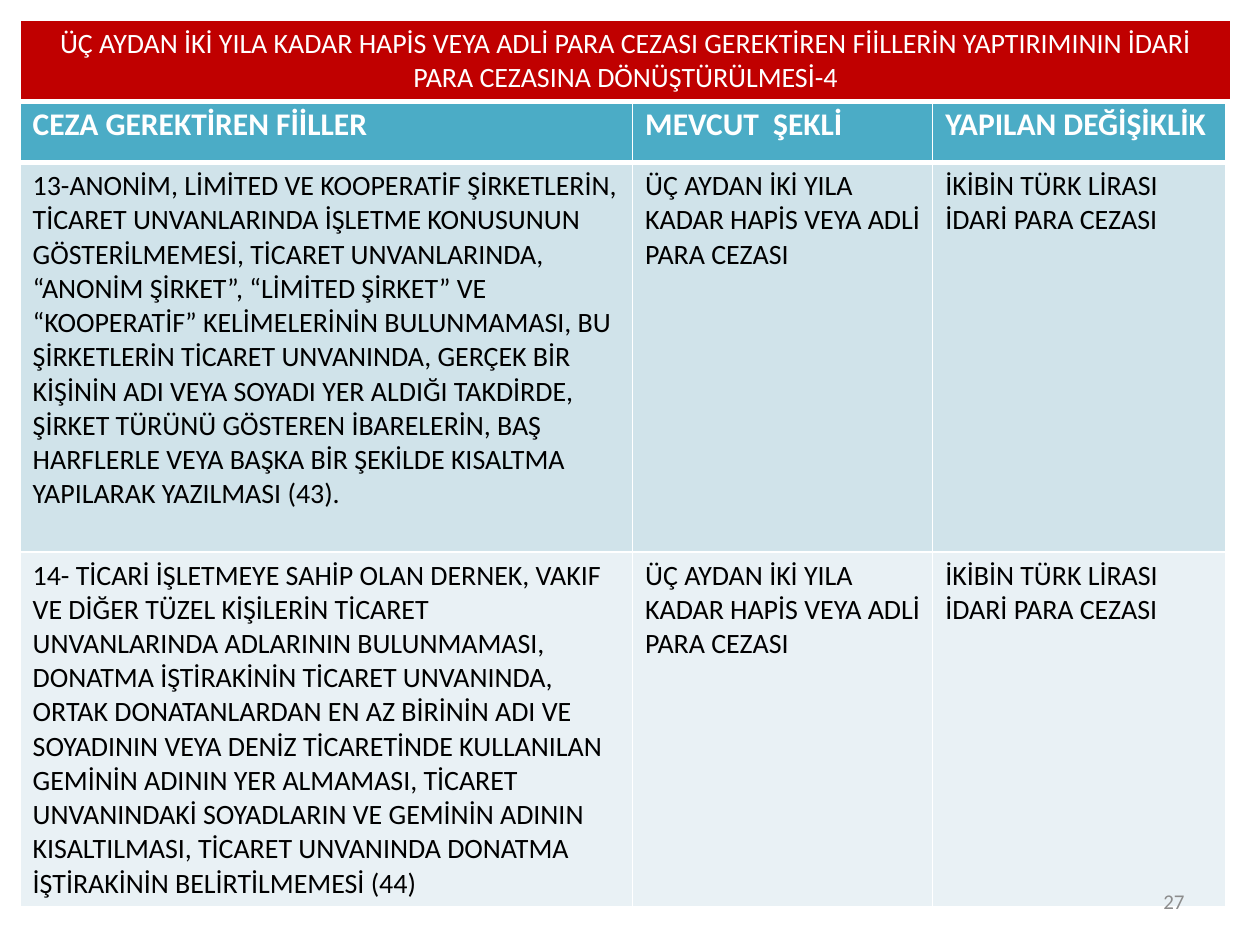
from lxml.etree import SubElement
from pptx import Presentation
from pptx.dml.color import RGBColor
from pptx.enum.text import MSO_ANCHOR, PP_ALIGN
from pptx.oxml.ns import qn
from pptx.util import Pt

FONT = "Calibri"
COLORS = {
    "white": "FFFFFF",
    "black": "000000",
    "title": "C00000",
    "header": "4BACC6",
    "band_dark": "D0E3EA",
    "band_light": "E9F1F5",
    "number": "8C8C8C",
}
TITLE = (
    "ÜÇ AYDAN İKİ YILA KADAR HAPİS VEYA ADLİ PARA CEZASI GEREKTİREN "
    "FİİLLERİN YAPTIRIMININ İDARİ PARA CEZASINA DÖNÜŞTÜRÜLMESİ-4"
)
HEADERS = ["CEZA GEREKTİREN FİİLLER", "MEVCUT  ŞEKLİ", "YAPILAN DEĞİŞİKLİK"]
OFFENCES = [
    "13-ANONİM, LİMİTED VE KOOPERATİF ŞİRKETLERİN, TİCARET UNVANLARINDA "
    "İŞLETME KONUSUNUN GÖSTERİLMEMESİ, TİCARET UNVANLARINDA, “ANONİM ŞİRKET”, "
    "“LİMİTED ŞİRKET” VE “KOOPERATİF” KELİMELERİNİN BULUNMAMASI, BU "
    "ŞİRKETLERİN TİCARET UNVANINDA, GERÇEK BİR KİŞİNİN ADI VEYA SOYADI YER "
    "ALDIĞI TAKDİRDE, ŞİRKET TÜRÜNÜ GÖSTEREN İBARELERİN, BAŞ HARFLERLE VEYA "
    "BAŞKA BİR ŞEKİLDE KISALTMA YAPILARAK YAZILMASI (43).",
    "14- TİCARİ İŞLETMEYE SAHİP OLAN DERNEK, VAKIF VE DİĞER TÜZEL KİŞİLERİN "
    "TİCARET UNVANLARINDA ADLARININ BULUNMAMASI, DONATMA İŞTİRAKİNİN TİCARET "
    "UNVANINDA, ORTAK DONATANLARDAN EN AZ BİRİNİN ADI VE SOYADININ VEYA DENİZ "
    "TİCARETİNDE KULLANILAN GEMİNİN ADININ YER ALMAMASI, TİCARET UNVANINDAKİ "
    "SOYADLARIN VE GEMİNİN ADININ KISALTILMASI, TİCARET UNVANINDA DONATMA "
    "İŞTİRAKİNİN BELİRTİLMEMESİ (44)",
]
CURRENT = "ÜÇ AYDAN İKİ YILA KADAR HAPİS VEYA ADLİ PARA CEZASI"
CHANGED = "İKİBİN TÜRK LİRASI İDARİ PARA CEZASI"


def write(frame, text, size, color, bold=False, align=PP_ALIGN.LEFT):
    paragraph = frame.paragraphs[0]
    paragraph.alignment = align
    run = paragraph.add_run()
    run.text = text
    run.font.name = FONT
    run.font.size = Pt(size)
    run.font.bold = bold
    run.font.color.rgb = RGBColor.from_string(COLORS[color])


def set_borders(cell, bottom):
    properties = cell._tc.get_or_add_tcPr()
    for side, width in (("L", 1), ("R", 1), ("T", 1), ("B", bottom)):
        line = SubElement(properties, qn(f"a:ln{side}"), w=str(Pt(width)))
        fill = SubElement(line, qn("a:solidFill"))
        SubElement(fill, qn("a:srgbClr"), val=COLORS["white"])


def style_cell(cell, fill, bottom=1):
    cell.margin_left = cell.margin_right = Pt(7.2)
    cell.margin_top = cell.margin_bottom = Pt(3.6)
    set_borders(cell, bottom)
    cell.fill.solid()
    cell.fill.fore_color.rgb = RGBColor.from_string(COLORS[fill])


def add_grid(slide, left, top, widths, heights):
    table = slide.shapes.add_table(
        len(heights), len(widths), Pt(left), Pt(top), Pt(sum(widths)), Pt(sum(heights))
    ).table
    for column, width in zip(table.columns, widths):
        column.width = Pt(width)
    for row, height in zip(table.rows, heights):
        row.height = Pt(height)
    return table


def add_offence_table(slide, left, top, widths, heights):
    table = add_grid(slide, left, top, widths, heights)
    for cell, text in zip(table.rows[0].cells, HEADERS):
        style_cell(cell, "header", bottom=3)
        write(cell.text_frame, text, 18, "white", bold=True)
    for index, (offence, fill) in enumerate(zip(OFFENCES, ("band_dark", "band_light")), 1):
        for cell, text in zip(table.rows[index].cells, (offence, CURRENT, CHANGED)):
            style_cell(cell, fill)
            write(cell.text_frame, text, 16, "black")


def add_title(slide, left, top, width, height):
    cell = add_grid(slide, left, top, [width], [height]).cell(0, 0)
    style_cell(cell, "title", bottom=3)
    write(cell.text_frame, TITLE, 16, "white", align=PP_ALIGN.CENTER)


def add_slide_number(slide, left, top, width, height):
    frame = slide.shapes.add_textbox(Pt(left), Pt(top), Pt(width), Pt(height)).text_frame
    frame.word_wrap = True
    frame.vertical_anchor = MSO_ANCHOR.MIDDLE
    write(frame, "27", 12, "number", align=PP_ALIGN.RIGHT)


def main():
    presentation = Presentation()
    presentation.slide_width, presentation.slide_height = Pt(720), Pt(540)
    slide = presentation.slides.add_slide(presentation.slide_layouts[6])
    add_offence_table(slide, 11.5, 56.5, [350, 171.5, 167.5], [36.5, 222.5, 202])
    add_title(slide, 11.5, 11.5, 692, 45.5)
    add_slide_number(slide, 516, 500.5, 168, 28.75)
    presentation.save("out.pptx")


if __name__ == "__main__":
    main()
